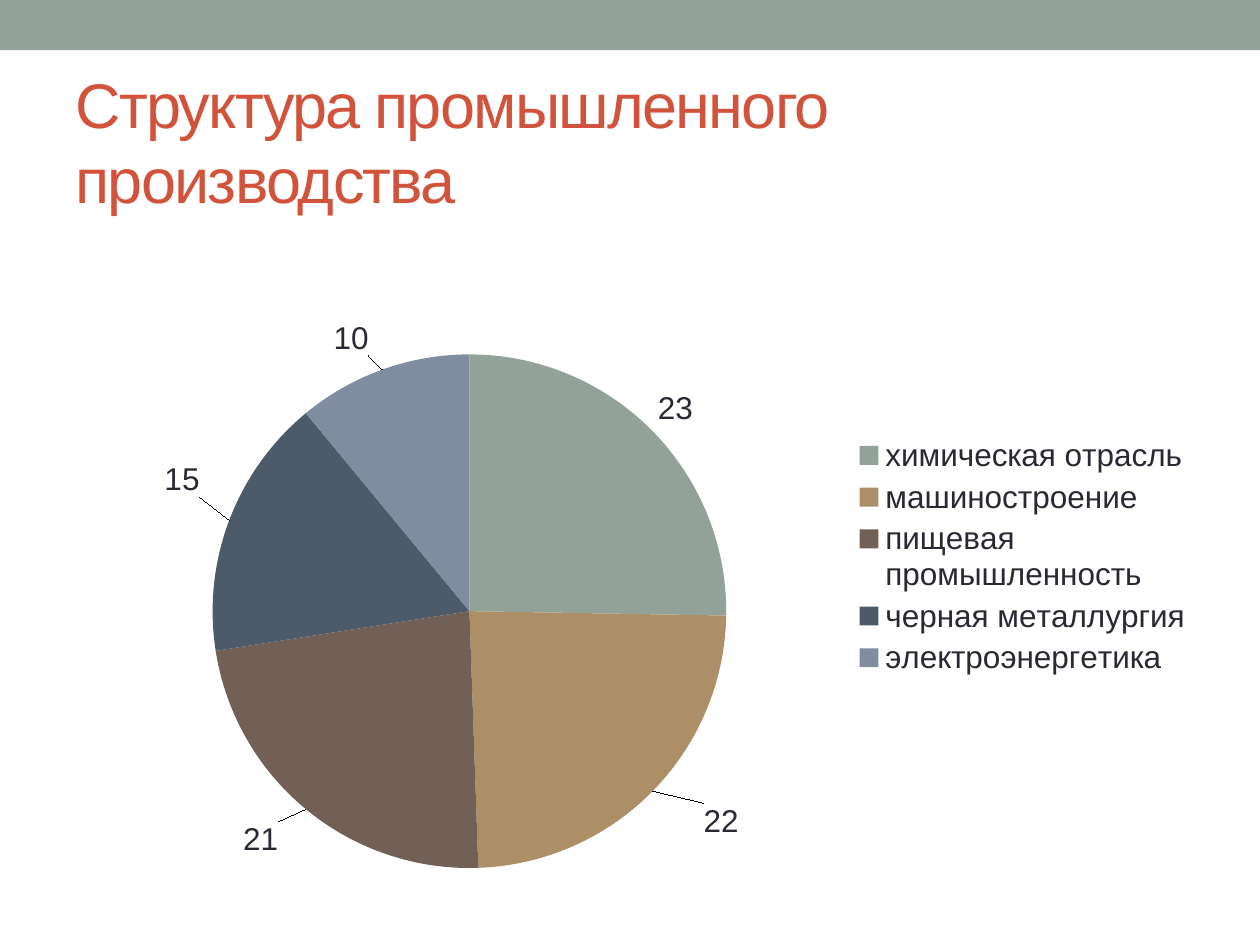
from lxml import etree
from pptx import Presentation
from pptx import util as u
from pptx.chart.data import CategoryChartData
from pptx.dml.color import RGBColor
from pptx.enum import chart as ch, shapes, text
from pptx.oxml.ns import qn

WIDTH, HEIGHT = 10, 7.5
FONT = "Arial"
COLORS = {
    "bar": "93A299",
    "title": "D2533C",
    "text": "292934",
    "химическая отрасль": "93A299",
    "машиностроение": "AD8F67",
    "пищевая промышленность": "726056",
    "черная металлургия": "4C5A6A",
    "электроэнергетика": "808DA0",
}
INDUSTRY_SHARES = {
    "химическая отрасль": 23,
    "машиностроение": 22,
    "пищевая промышленность": 21,
    "черная металлургия": 15,
    "электроэнергетика": 10,
}
# Label shifts from the outside end, as shares of the chart's size
LABEL_SHIFTS = {1: (0.04, 0.01), 2: (-0.02, 0.01), 3: (-0.02, -0.03), 4: (-0.01, -0.01)}


def color(name):
    return RGBColor.from_string(COLORS[name])


def share_box(left, top, width, height):
    """Turn shares of the slide's size into lengths."""
    return (u.Inches(left * WIDTH), u.Inches(top * HEIGHT),
            u.Inches(width * WIDTH), u.Inches(height * HEIGHT))


def format_font(font, size, color_name):
    font.name = FONT
    font.size = u.Pt(size)
    font.color.rgb = color(color_name)


def write_text(frame, content, size, color_name, spacing=0,
               align=text.PP_ALIGN.LEFT, anchor=text.MSO_ANCHOR.MIDDLE):
    frame.word_wrap = True
    frame.auto_size = text.MSO_AUTO_SIZE.NONE
    frame.vertical_anchor = anchor
    paragraph = frame.paragraphs[0]
    paragraph.alignment = align
    run = paragraph.add_run()
    run.text = content
    format_font(run.font, size, color_name)
    run.font._element.set("spc", str(spacing * 100))


def manual_layout(**values):
    """Build a chart layout element from its child names and values."""
    layout = etree.Element(qn("c:layout"))
    manual = etree.SubElement(layout, qn("c:manualLayout"))
    for name, value in values.items():
        etree.SubElement(manual, qn(f"c:{name}")).set("val", str(value))
    return layout


def add_top_bar(slide, box):
    shape = slide.shapes.add_shape(shapes.MSO_SHAPE.RECTANGLE, *box)
    shape.shadow.inherit = False
    shape.fill.solid()
    shape.fill.fore_color.rgb = color("bar")
    shape.line.fill.background()


def place_title(slide, box, content):
    title = slide.shapes.title
    title.left, title.top, title.width, title.height = box
    write_text(title.text_frame, content, 36, "title", spacing=-1)


def add_pie(slide, box, shares):
    data = CategoryChartData()
    data.categories = list(shares)
    data.add_series("", list(shares.values()))
    chart = slide.shapes.add_chart(ch.XL_CHART_TYPE.PIE, *box, data).chart
    chart.has_title = False
    format_font(chart.font, 18, "text")
    chart.has_legend = True
    chart.legend.position = ch.XL_LEGEND_POSITION.RIGHT
    chart.legend.include_in_layout = False

    plot_area = chart._chartSpace.chart.plotArea
    for old_layout in plot_area.findall(qn("c:layout")):
        plot_area.remove(old_layout)
    plot_area.insert(0, manual_layout(
        layoutTarget="inner", xMode="edge", yMode="edge", x=0.13, y=0.2, w=0.45, h=0.76))

    plot = chart.plots[0]
    plot.vary_by_categories = True
    series = plot.series[0]
    labels = series.data_labels
    labels.show_value = True
    labels.position = ch.XL_LABEL_POSITION.OUTSIDE_END
    format_font(labels.font, 18, "text")
    for index, category in enumerate(shares):
        point = series.points[index]
        point.format.fill.solid()
        point.format.fill.fore_color.rgb = color(category)
        point.format.line.fill.background()
        if index in LABEL_SHIFTS:
            point.data_label.position = ch.XL_LABEL_POSITION.OUTSIDE_END
            x, y = LABEL_SHIFTS[index]
            label = labels._element.find(f"{qn('c:dLbl')}[{index and len(labels._element.findall(qn('c:dLbl')))}]")
            label.find(qn("c:idx")).addnext(manual_layout(x=x, y=y))


def main():
    presentation = Presentation()
    presentation.slide_width = u.Inches(WIDTH)
    presentation.slide_height = u.Inches(HEIGHT)
    slide = presentation.slides.add_slide(presentation.slide_layouts.get_by_name("Title Only"))
    add_top_bar(slide, share_box(0, 0, 1, 0.053))
    place_title(slide, share_box(0.05, 0.077, 0.9, 0.144), "Структура промышленного производства")
    add_pie(slide, share_box(0.051, 0.227, 0.906, 0.724), INDUSTRY_SHARES)
    presentation.save("out.pptx")


if __name__ == "__main__":
    main()
